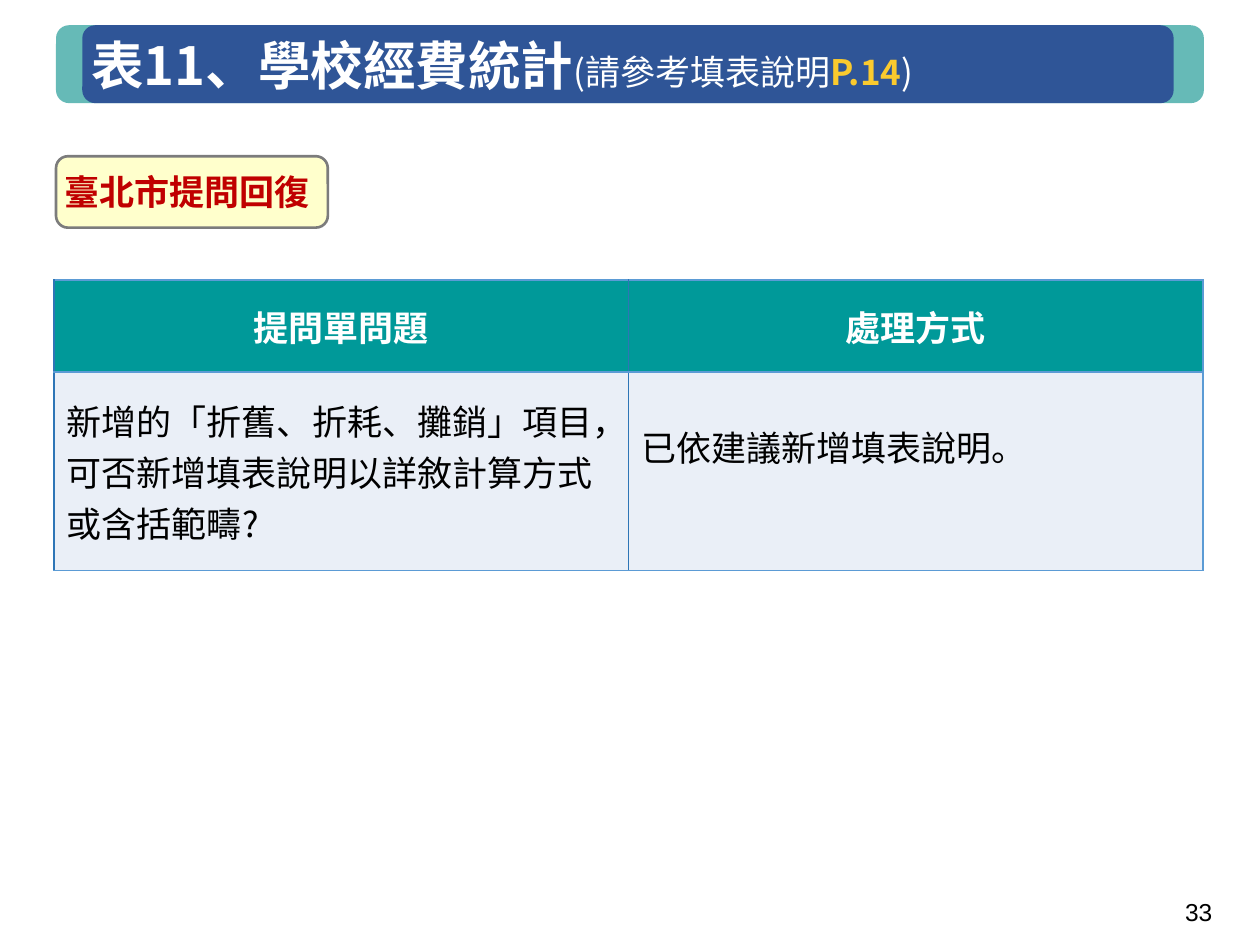
from dataclasses import dataclass

from lxml import etree
from pptx import Presentation
from pptx.dml.color import RGBColor
from pptx.enum.shapes import MSO_SHAPE
from pptx.enum.text import MSO_ANCHOR, PP_ALIGN
from pptx.oxml.ns import qn
from pptx.util import Cm, Pt

ROUNDED = MSO_SHAPE.ROUNDED_RECTANGLE
MIDDLE = MSO_ANCHOR.MIDDLE
LEFT, CENTER, RIGHT, JUSTIFY = PP_ALIGN.LEFT, PP_ALIGN.CENTER, PP_ALIGN.RIGHT, PP_ALIGN.JUSTIFY


@dataclass(frozen=True)
class Theme:
    cjk: str = "Noto Sans CJK SC"
    latin: str = "Arial"
    title_size: int = 30
    body_size: int = 20
    number_size: int = 14
    white: str = "FFFFFF"
    black: str = "000000"
    teal: str = "66BAB7"
    navy: str = "2F5597"
    gold: str = "FACA2E"
    cream: str = "FFFFCC"
    gray: str = "7C7C7C"
    red: str = "C00000"
    header: str = "009999"
    body: str = "EAEFF7"
    side_border: str = "2E75B6"
    border: str = "5B9BD5"


theme = Theme()


def style_font(font, size, color, bold=False, name=theme.cjk):
    font.size, font.bold, font.name = Pt(size), bold, name
    font.color.rgb = RGBColor.from_string(color)
    # East Asian text takes its typeface from a:ea, right after a:latin
    latin = font._element.find(qn("a:latin"))
    east_asian = etree.Element(qn("a:ea"), typeface=name)
    latin.addnext(east_asian)


def set_border(cell, colors):
    properties = cell._tc.get_or_add_tcPr()
    for side, color in zip("LRTB", colors):
        line = etree.SubElement(properties, qn(f"a:ln{side}"), w=str(Pt(1)))
        fill = etree.SubElement(line, qn("a:solidFill"))
        etree.SubElement(fill, qn("a:srgbClr"), val=color)


prs = Presentation()
prs.slide_width, prs.slide_height = Cm(25.4), Cm(19.05)
slide = prs.slides.add_slide(prs.slide_layouts[6])

# Title band: navy bar over a wider teal bar
band = slide.shapes.add_group_shape()
for left, width, color in ((1.13, 23.14, theme.teal), (1.66, 22, theme.navy)):
    bar = band.shapes.add_shape(ROUNDED, Cm(left), Cm(0.51), Cm(width), Cm(1.57))
    bar.shadow.inherit = False
    bar.fill.solid()
    bar.fill.fore_color.rgb = RGBColor.from_string(color)
    bar.line.fill.background()

# Title
title = slide.shapes.add_textbox(Cm(1.66), Cm(0.18), Cm(19.05), Cm(2.39)).text_frame
title.word_wrap = True
title.vertical_anchor = MIDDLE
title.margin_left = title.margin_right = Cm(0.18)
title.margin_top = title.margin_bottom = Cm(0.1)
title_line = title.paragraphs[0]
title_line.line_spacing = 0.9
for text, size, color, bold in (
    ("表11、學校經費統計", theme.title_size, theme.white, True),
    ("(請參考填表說明", theme.body_size, theme.white, False),
    ("P.14", theme.body_size, theme.gold, True),
    (")", theme.body_size, theme.white, False),
):
    part = title_line.add_run()
    part.text = text
    style_font(part.font, size, color, bold)

# City label
city = slide.shapes.add_shape(ROUNDED, Cm(1.13), Cm(3.15), Cm(5.48), Cm(1.44))
city.shadow.inherit = False
city.fill.solid()
city.fill.fore_color.rgb = RGBColor.from_string(theme.cream)
city.line.color.rgb = RGBColor.from_string(theme.gray)
city.line.width = Pt(1.5)
city_text = city.text_frame
city_text.vertical_anchor = MIDDLE
city_text.margin_left = city_text.margin_right = Cm(0.1)
city_text.margin_top = city_text.margin_bottom = Cm(0.1)
city_line = city_text.paragraphs[0]
city_line.text = "臺北市提問回復"
city_line.alignment = LEFT
city_line.line_spacing = Pt(24)
style_font(city_line.font, theme.body_size, theme.red, True)

# Questions and replies
ROWS = (
    (("提問單問題", CENTER), ("處理方式", CENTER)),
    (
        ("新增的「折舊、折耗、攤銷」項目，可否新增填表說明以詳敘計算方式或含括範疇?", LEFT),
        ("已依建議新增填表說明。", JUSTIFY),
    ),
)
ROW_STYLES = (
    (1.86, theme.header, theme.white, True),
    (4, theme.body, theme.black, False),
)
RIGHT_BORDERS = (theme.side_border, theme.border)
replies = slide.shapes.add_table(2, 2, Cm(1.09), Cm(5.64), Cm(23.16), Cm(5.86)).table
for r, (row, (height, fill, color, bold)) in enumerate(zip(ROWS, ROW_STYLES)):
    replies.rows[r].height = Cm(height)
    for c, (text, alignment) in enumerate(row):
        cell = replies.cell(r, c)
        set_border(cell, (theme.side_border, RIGHT_BORDERS[c], theme.border, theme.border))
        cell.fill.solid()
        cell.fill.fore_color.rgb = RGBColor.from_string(fill)
        cell.vertical_anchor = MIDDLE
        line = cell.text_frame.paragraphs[0]
        line.text = text
        line.alignment = alignment
        style_font(line.font, theme.body_size, color, bold)
# The reply sits a little above the middle of its row
replies.cell(1, 1).margin_bottom = Cm(1.15)

# Page number
page = slide.shapes.add_textbox(Cm(18.97), Cm(17.86), Cm(5.72), Cm(1.02)).text_frame
page.word_wrap = True
page.vertical_anchor = MIDDLE
page_line = page.paragraphs[0]
page_line.text = "33"
page_line.alignment = RIGHT
style_font(page_line.font, theme.number_size, theme.black, name=theme.latin)

prs.save("out.pptx")
